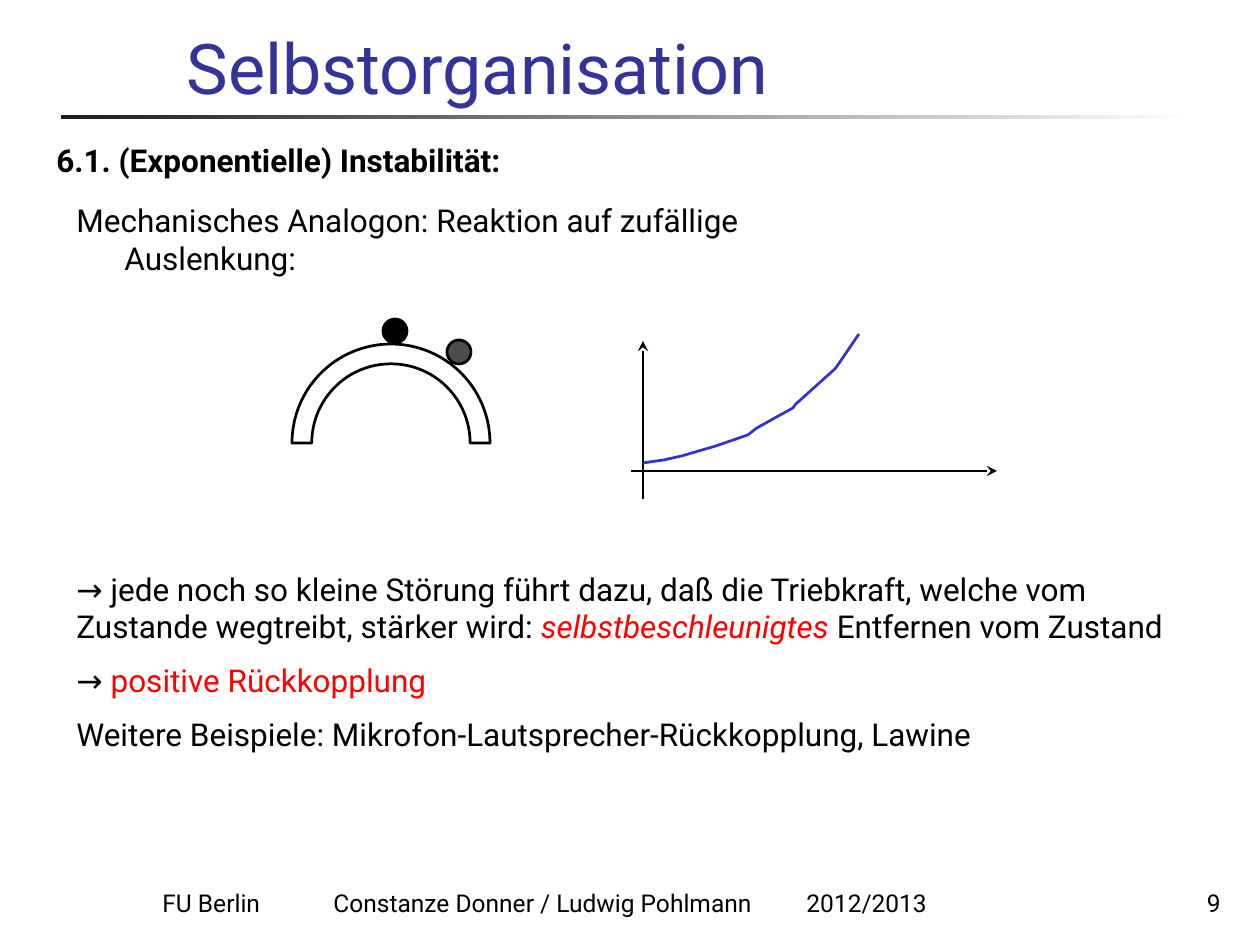
import pptx
import pptx.dml.color
import pptx.enum.shapes
import pptx.enum.text
import pptx.oxml
import pptx.util
from pptx.oxml.ns import qn

PX_PER_INCH = 126
FONT = "Roboto"
BLACK, RED = "000000", "FF0000"
LINE_WIDTH = pptx.util.Pt(1.55)
SHAPE = pptx.enum.shapes.MSO_SHAPE
ANCHOR = pptx.enum.text.MSO_ANCHOR
ALIGN = pptx.enum.text.PP_ALIGN


def px(length):
    return pptx.util.Emu(round(length * 914400 / PX_PER_INCH))


def color(hex_code):
    return pptx.dml.color.RGBColor.from_string(hex_code)


def place(element, left, top, width, height):
    element.left, element.top = px(left), px(top)
    element.width, element.height = px(width), px(height)


def style_run(run, size, hex_code=BLACK, bold=False, italic=False):
    run.font.name = FONT
    run.font.size = pptx.util.Pt(size)
    run.font.bold, run.font.italic = bold, italic
    run.font.color.rgb = color(hex_code)


def add_title(slide, text, box):
    title = slide.shapes.title
    place(title, *box)
    frame = title.text_frame
    frame.text = text
    frame.auto_size = pptx.enum.text.MSO_AUTO_SIZE.NONE
    frame.vertical_anchor = ANCHOR.BOTTOM
    frame.paragraphs[0].alignment = ALIGN.LEFT
    style_run(frame.paragraphs[0].runs[0], 40, "333399")


def add_text(slide, box, paragraphs, size=18, anchor=ANCHOR.TOP,
             align=ALIGN.LEFT, space_before=9, bold=False, hanging=0):
    """Each paragraph is a list of (text, colour, italic) runs."""
    frame = slide.shapes.add_textbox(*map(px, box)).text_frame
    frame.word_wrap = True
    frame.vertical_anchor = anchor
    for index, parts in enumerate(paragraphs):
        paragraph = frame.add_paragraph() if index else frame.paragraphs[0]
        paragraph.alignment = align
        paragraph.space_before = pptx.util.Pt(space_before)
        if hanging:
            properties = paragraph._p.get_or_add_pPr()
            properties.set("marL", str(px(hanging)))
            properties.set("indent", str(-px(hanging)))
        for text, hex_code, italic in parts:
            run = paragraph.add_run()
            run.text = text
            style_run(run, size, hex_code, bold, italic)
    return frame


def set_tab_stops(paragraph, stops):
    tab_list = pptx.oxml.parse_xml(
        '<a:tabLst xmlns:a="http://schemas.openxmlformats.org/drawingml/2006/main"/>')
    for stop in stops:
        tab = tab_list.makeelement(qn("a:tab"), {"pos": str(px(stop)), "algn": "l"})
        tab_list.append(tab)
    paragraph._p.get_or_add_pPr().append(tab_list)


def add_outlined_shape(slide, kind, box, fill):
    shape = slide.shapes.add_shape(kind, *map(px, box))
    shape.shadow.inherit = False
    shape.fill.solid()
    shape.fill.fore_color.rgb = color(fill)
    shape.line.color.rgb = color(BLACK)
    shape.line.width = LINE_WIDTH
    return shape


def add_title_rule(slide, box):
    rule = slide.shapes.add_shape(SHAPE.RECTANGLE, *map(px, box))
    rule.shadow.inherit = False
    rule.line.fill.background()
    rule.fill.gradient()
    rule.fill.gradient_angle = 0
    for stop, hex_code, position in zip(rule.fill.gradient_stops,
                                        ("1C1C1C", "FFFFFF"), (0, 1)):
        stop.color.rgb = color(hex_code)
        stop.position = position


def add_axis(slide, start, end):
    axis = slide.shapes.add_connector(
        pptx.enum.shapes.MSO_CONNECTOR.STRAIGHT, *map(px, start + end))
    axis.line.color.rgb = color(BLACK)
    axis.line.width = LINE_WIDTH
    outline = axis.line._ln
    outline.append(outline.makeelement(qn("a:tailEnd"), {"type": "stealth"}))
    properties = axis._element.spPr
    properties.append(properties.makeelement(qn("a:effectLst"), {}))


def add_growth_curve(slide, points):
    start, *rest = [(px(x), px(y)) for x, y in points]
    builder = slide.shapes.build_freeform(*start)
    builder.add_line_segments(rest, close=False)
    curve = builder.convert_to_shape()
    curve.shadow.inherit = False
    curve.fill.background()
    curve.line.color.rgb = color("3333CC")
    curve.line.width = LINE_WIDTH


def main():
    presentation = pptx.Presentation()
    presentation.slide_width, presentation.slide_height = px(1260), px(945)
    slide = presentation.slides.add_slide(presentation.slide_layouts[5])

    # Title with rule
    add_title_rule(slide, (61, 115, 1134, 4))
    add_title(slide, "Selbstorganisation", (174, 29, 1058, 86))

    # Section heading and introduction
    add_text(slide, (44, 135, 548, 50),
             [[("6.1. (Exponentielle) Instabilität:", BLACK, False)]], bold=True)
    add_text(slide, (64, 195, 800, 50),
             [[("Mechanisches Analogon: Reaktion auf zufällige Auslenkung:",
                BLACK, False)]], hanging=48)

    # Ball on an arch, before and after the displacement
    add_outlined_shape(slide, SHAPE.OVAL, (383, 319, 24, 24), BLACK)
    add_outlined_shape(slide, SHAPE.OVAL, (447, 340, 24, 24), "4D4D4D")
    arch = add_outlined_shape(slide, SHAPE.BLOCK_ARC, (292, 344, 198, 198), "FFFFFF")
    arch.adjustments[2] = 0.1

    # Growth diagram
    add_axis(slide, (643, 499), (643, 341))
    add_axis(slide, (631, 471), (997, 471))
    add_growth_curve(slide, [
        (643, 463), (664, 460), (682, 456), (716, 446), (748, 435), (757, 428),
        (793, 408), (796, 404), (835, 369), (838, 365), (859, 334)])

    # Conclusions
    add_text(slide, (64, 559, 1135, 204), [
        [("→ jede noch so kleine Störung führt dazu, daß die Triebkraft, "
          "welche vom Zustande wegtreibt, stärker wird: ", BLACK, False),
         ("selbstbeschleunigtes", RED, True),
         (" Entfernen vom Zustand", BLACK, False)],
        [("→ ", BLACK, False), ("positive Rückkopplung", RED, False)],
        [("Weitere Beispiele: Mikrofon-Lautsprecher-Rückkopplung, Lawine",
          BLACK, False)],
    ], anchor=ANCHOR.MIDDLE)

    # Footer and page number
    footer = add_text(
        slide, (44, 861, 1002, 63),
        [[("\tFU Berlin\tConstanze Donner / Ludwig Pohlmann\t2012/2013",
           BLACK, False)]],
        size=14, anchor=ANCHOR.BOTTOM, space_before=0)
    set_tab_stops(footer.paragraphs[0], (106, 277, 750))
    add_text(slide, (1067, 861, 166, 63), [[("9", BLACK, False)]], size=14,
             anchor=ANCHOR.BOTTOM, align=ALIGN.RIGHT, space_before=0)

    presentation.save("out.pptx")


if __name__ == "__main__":
    main()
